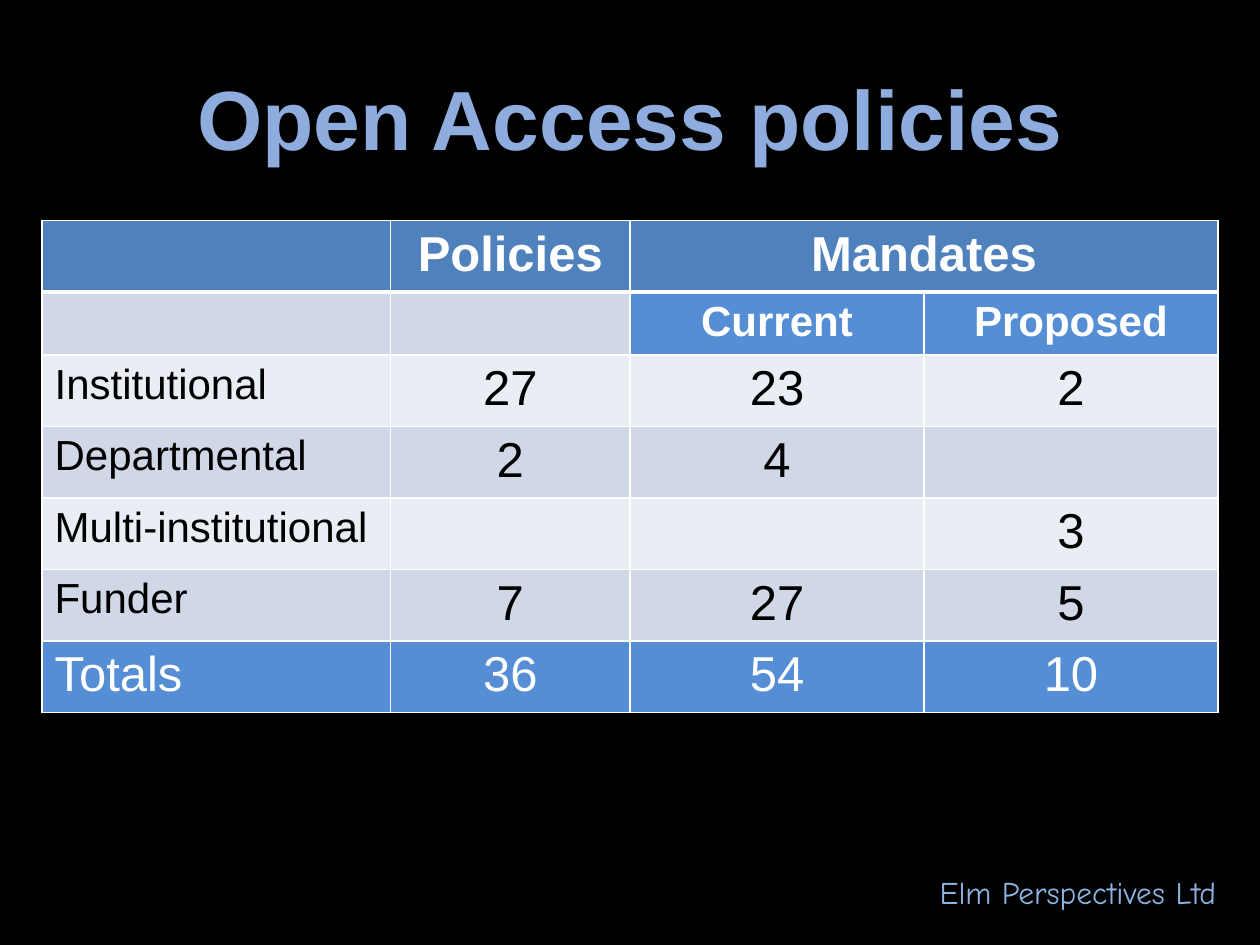
from lxml import etree
from pptx import Presentation
from pptx.dml.color import RGBColor
from pptx.enum.text import MSO_ANCHOR, PP_ALIGN
from pptx.oxml.ns import qn
from pptx.util import Pt

LEFT, CENTER, RIGHT = PP_ALIGN.LEFT, PP_ALIGN.CENTER, PP_ALIGN.RIGHT
MIDDLE, TOP = MSO_ANCHOR.MIDDLE, MSO_ANCHOR.TOP

COLORS = {name: RGBColor.from_string(code) for name, code in {
    "background": "000000",
    "title": "8FACDE",
    "title_end": "779DD9",
    "credit": "8EB4E3",
    "header": "4F81BD",
    "accent": "558ED5",
    "band_dark": "D0D8E8",
    "band_light": "E9EDF4",
    "white": "FFFFFF",
    "black": "000000",
}.items()}

COLUMN_WIDTHS = [199.2, 136.8, 168, 168]
ROW_HEIGHT = 29.5
ROWS = [
    ["", "Policies", "Mandates", ""],
    ["", "", "Current", "Proposed"],
    ["Institutional", "27", "23", "2"],
    ["Departmental", "2", "4", ""],
    ["Multi-institutional", "", "", "3"],
    ["Funder", "7", "27", "5"],
    ["Totals", "36", "54", "10"],
]
LAST_ROW = len(ROWS) - 1


def write(frame, text, align, color, **font_values):
    para = frame.paragraphs[0]
    para.alignment = align
    span = para.add_run()
    span.text = text
    for name, value in font_values.items():
        setattr(span.font, name, value)
    span.font.color.rgb = COLORS[color]
    return span


def add_text(page, bounds, anchor, text, align, color, **font_values):
    box = page.shapes.add_textbox(*map(Pt, bounds))
    box.text_frame.word_wrap = True
    box.text_frame.vertical_anchor = anchor
    return write(box.text_frame, text, align, color, **font_values)


def shade_title(span):
    fill = span.font.fill
    fill.gradient()
    fill.gradient_angle = 280
    stops = [(0.73, "title"), (1, "title_end")]
    for stop, (position, color) in zip(fill.gradient_stops, stops):
        stop.position = position
        stop.color.rgb = COLORS[color]


def cell_style(row, column):
    """Return the fill, text colour, size and weight of a cell."""
    if row == 0:
        return "header", "white", 28, True
    if row == 1 and column >= 2:
        return "accent", "white", 24, True
    if row == LAST_ROW:
        return "accent", "white", 28, False
    band = "band_dark" if row % 2 else "band_light"
    return band, "black", 28 if column else 24, False


def set_borders(cell, row):
    # Borders must come before the fill in the cell properties
    properties = cell._tc.get_or_add_tcPr()
    widths = {
        "a:lnL": 1,
        "a:lnR": 1,
        "a:lnT": 3 if row == 1 else 1,
        "a:lnB": 3 if row == 0 else 1,
    }
    for index, (tag, width) in enumerate(widths.items()):
        line = etree.Element(qn(tag), w=str(Pt(width)))
        solid = etree.SubElement(line, qn("a:solidFill"))
        etree.SubElement(solid, qn("a:srgbClr"), val=str(COLORS["white"]))
        properties.insert(index, line)


def add_policy_table(page):
    frame = page.shapes.add_table(
        len(ROWS), len(COLUMN_WIDTHS),
        Pt(24), Pt(126), Pt(sum(COLUMN_WIDTHS)), Pt(290))
    table = frame.table
    for column, width in zip(table.columns, COLUMN_WIDTHS):
        column.width = Pt(width)
    for row in table.rows:
        row.height = Pt(ROW_HEIGHT)
    table.cell(0, 2).merge(table.cell(0, 3))

    for row, texts in enumerate(ROWS):
        for column, text in enumerate(texts):
            cell = table.cell(row, column)
            fill, color, size, bold = cell_style(row, column)
            cell.fill.solid()
            cell.fill.fore_color.rgb = COLORS[fill]
            set_borders(cell, row)
            if text:
                write(cell.text_frame, text, CENTER if column else LEFT, color,
                      name="Arial", size=Pt(size), bold=bold)


def main():
    deck = Presentation()
    deck.slide_width, deck.slide_height = Pt(720), Pt(540)
    page = deck.slides.add_slide(deck.slide_layouts[6])
    page.background.fill.solid()
    page.background.fill.fore_color.rgb = COLORS["background"]

    # Title
    title = add_text(page, (36, 21.6, 648, 90), MIDDLE, "Open Access policies",
                     CENTER, "title", name="Arial", size=Pt(48), bold=True)
    shade_title(title)

    # Policies and mandates
    add_policy_table(page)

    # Credit
    add_text(page, (492, 495.4, 210, 28.8), TOP, "Elm Perspectives Ltd",
             RIGHT, "credit", name="Comic Neue", size=Pt(18))

    deck.save("out.pptx")


if __name__ == "__main__":
    main()
